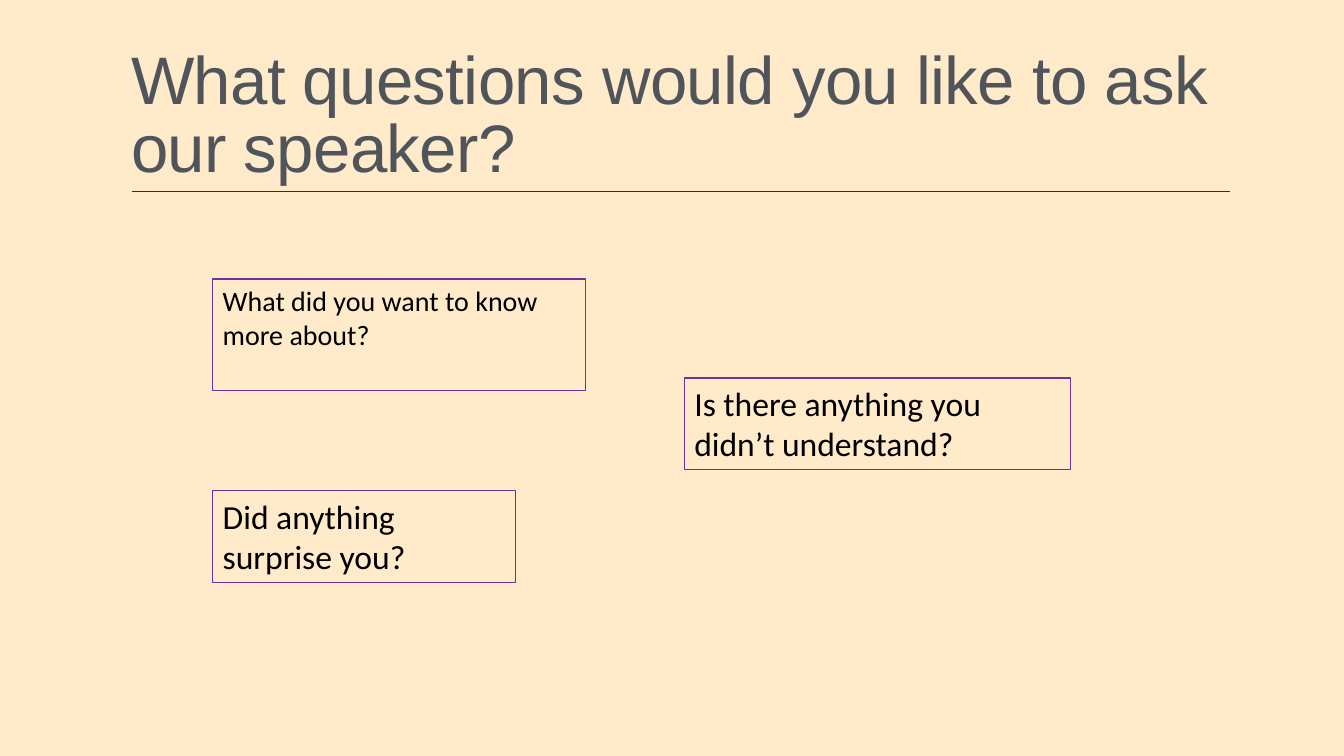
from lxml.etree import SubElement
from pptx import Presentation
from pptx.dml.color import RGBColor
from pptx.enum.shapes import MSO_CONNECTOR, MSO_SHAPE
from pptx.enum.text import MSO_ANCHOR, MSO_AUTO_SIZE, PP_ALIGN
from pptx.oxml.ns import qn
from pptx.util import Pt

TITLE = "What questions would you like to ask our speaker?"
LEFT = 152
# text, left, top, width, height, text size
PROMPTS = [
    ("What did you want to know more about?", LEFT, 199.3, 266.4, 80, 20),
    ("Is there anything you didn’t understand?", 488.9, 270, 275.8, 65.5, 24),
    ("Did anything surprise you?", LEFT, 350.6, 216, 65.5, 24),
]


def color(code):
    return RGBColor.from_string(code)


def place(shape, *box):
    shape.left, shape.top, shape.width, shape.height = map(Pt, box)


def write(frame, text, face, size, ink, anchor):
    """Fill a text frame with one left-aligned run and return the run."""
    frame.word_wrap = True
    frame.auto_size = MSO_AUTO_SIZE.NONE
    frame.vertical_anchor = anchor
    para = frame.paragraphs[0]
    para.alignment = PP_ALIGN.LEFT
    run = para.add_run()
    run.text = text
    run.font.name = face
    run.font.size = Pt(size)
    run.font.color.rgb = color(ink)
    return run


deck = Presentation()
deck.slide_width, deck.slide_height = Pt(960), Pt(540)
slide = deck.slides.add_slide(deck.slide_layouts[5])
slide.background.fill.solid()
slide.background.fill.fore_color.rgb = color("FFEACA")

rule = slide.shapes.add_connector(
    MSO_CONNECTOR.STRAIGHT, Pt(94.3), Pt(136.8), Pt(878.4), Pt(136.8))
rule.line.color.rgb = color("40243C")
rule.line.width = Pt(1)
SubElement(rule._element.spPr, qn("a:effectLst"))

title = slide.shapes.title
place(title, 86.4, 22.3, 792, 114.5)
run = write(title.text_frame, TITLE, "Arial", 48, "50555B", MSO_ANCHOR.BOTTOM)
run._r.get_or_add_rPr().set("spc", "-50")
title.text_frame.paragraphs[0].line_spacing = 0.85

for text, left, top, width, height, size in PROMPTS:
    box = slide.shapes.add_shape(
        MSO_SHAPE.RECTANGLE, *map(Pt, (left, top, width, height)))
    box.shadow.inherit = False
    box.fill.background()
    box.line.color.rgb = color("7030A0")
    box.line.width = Pt(0.75)
    write(box.text_frame, text, "Calibri", size, "000000", MSO_ANCHOR.TOP)

deck.save("out.pptx")
